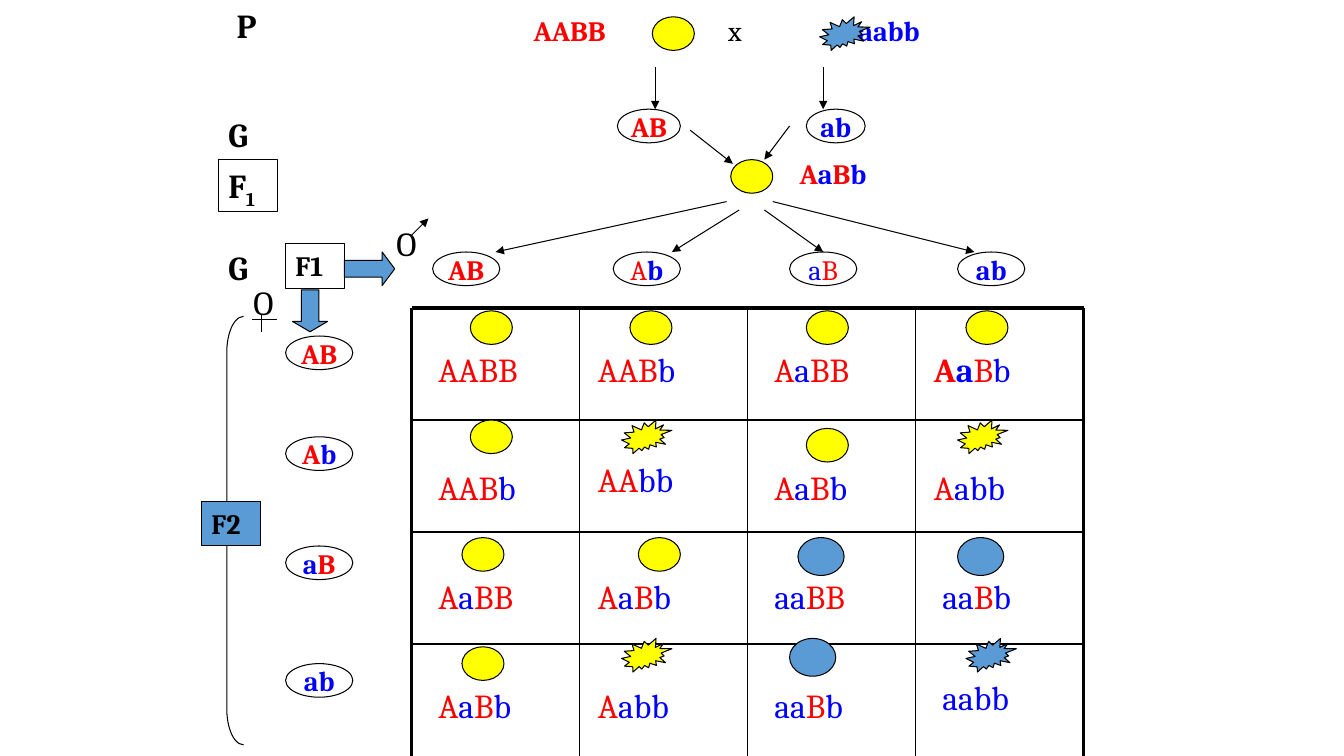
from itertools import groupby

from lxml.etree import SubElement
from pptx import Presentation
from pptx.dml.color import RGBColor
from pptx.enum.shapes import MSO_CONNECTOR, MSO_SHAPE as Preset
from pptx.enum.text import MSO_ANCHOR as Anchor, PP_ALIGN as Align
from pptx.oxml.ns import qn
from pptx.util import Pt

COLORS = {"black": "000000", "white": "FFFFFF", "dominant": "FF0000",
          "recessive": "0000FF", "yellow": "FFFF00", "blue": "5B9BD5"}
FONT = "Cambria"


def rgb(name):
    return RGBColor.from_string(COLORS[name])


def write(shape, text, size=24, bold="", color=None, subscript="",
          align=Align.LEFT, anchor=Anchor.TOP, wrap=True):
    """Write text; without a color each allele gets its own.
    bold and subscript list the letters they apply to."""
    def letter_format(letter):
        allele = "dominant" if letter.isupper() else "recessive"
        return color or allele, letter in bold, letter in subscript

    frame = shape.text_frame
    frame.word_wrap = wrap
    frame.vertical_anchor = anchor
    paragraph = frame.paragraphs[0]
    paragraph.alignment = align
    for (run_color, is_bold, is_sub), letters in groupby(text, letter_format):
        run = paragraph.add_run()
        run.text = "".join(letters)
        run.font.name = FONT
        run.font.size = Pt(size)
        run.font.bold = is_bold
        run.font.color.rgb = rgb(run_color)
        if is_sub:
            run.font._element.set("baseline", "-25000")


def add_label(slide, x, y, width, height, text, **text_format):
    write(slide.shapes.add_textbox(Pt(x), Pt(y), Pt(width), Pt(height)),
          text, **text_format)


def add_preset(slide, preset, x, y, width, height, fill=None, adjust=()):
    shape = slide.shapes.add_shape(preset, Pt(x), Pt(y), Pt(width), Pt(height))
    shape.shadow.inherit = False
    if fill:
        shape.fill.solid()
        shape.fill.fore_color.rgb = rgb(fill)
    else:
        shape.fill.background()
    shape.line.color.rgb = rgb("black")
    shape.line.width = Pt(0.75)
    for index, value in enumerate(adjust):
        shape.adjustments[index] = value
    return shape


def add_line(slide, x1, y1, x2, y2, weight=0.75, arrow=False):
    line = slide.shapes.add_connector(
        MSO_CONNECTOR.STRAIGHT, Pt(x1), Pt(y1), Pt(x2), Pt(y2))
    line.line.color.rgb = rgb("black")
    line.line.width = Pt(weight)
    if arrow:
        SubElement(line.line._get_or_add_ln(), qn("a:tailEnd"), type="triangle")
    SubElement(line._element.spPr, qn("a:effectLst"))


def add_gamete(slide, x, y, alleles, bold=None, width=48):
    oval = add_preset(slide, Preset.OVAL, x, y, width, 24, "white")
    write(oval, alleles, size=20, bold=alleles if bold is None else bold,
          align=Align.CENTER, anchor=Anchor.MIDDLE, wrap=False)


def add_seed(slide, x, y, genotype):
    """A gives yellow, aa blue; B gives round, bb wrinkled."""
    color = "yellow" if "A" in genotype else "blue"
    if "B" not in genotype:
        preset, width, height = Preset.EXPLOSION2, 36, 24
    elif color == "yellow":
        preset, width, height = Preset.OVAL, 30, 24
    else:
        preset, width, height = Preset.OVAL, 33, 27
    add_preset(slide, preset, x, y, width, height, color)


def generation_labels(slide, x, y):
    for dx, dy, width, name in ((6, 0, 37, "P"), (0, 78, 54, "G"), (0, 173, 54, "G")):
        add_label(slide, x + dx, y + dy, width, 36, name, bold=name, color="black")
    first_generation = add_preset(slide, Preset.RECTANGLE, x, y + 114, 42, 37)
    write(first_generation, "F1", bold="F1", color="black", subscript="1")


def parent_cross(slide, x, y):
    # Parents
    add_label(slide, x + 2, y + 6, 90, 31, "AABB", size=20, bold="AB")
    add_label(slide, x + 141, y + 6, 30, 31, "x", size=20, color="black")
    add_label(slide, x + 234, y + 6, 90, 31, "aabb", size=20, bold="ab")
    add_seed(slide, x + 94, y + 12, "AABB")
    add_seed(slide, x + 213.5, y + 12, "aabb")
    # Parental gametes
    add_gamete(slide, x + 69, y + 78, "AB", width=45)
    add_gamete(slide, x + 204, y + 78, "ab", width=42)
    for x1, y1, x2, y2 in ((96, 48, 96, 78), (216, 48, 216, 78),
                           (121, 93, 151.5, 117), (192, 90, 174, 114)):
        add_line(slide, x + x1, y + y1, x + x2, y + y2, arrow=True)
    # First generation
    add_seed(slide, x + 150, y + 114, "AaBb")
    add_label(slide, x + 192, y + 108, 96, 31, "AaBb", size=20, bold="AaBb")


def male_gametes(slide, x, y):
    for x1, y1, x2 in ((225, 0, 60), (234, 6, 186), (252, 6, 294), (258, 0, 402)):
        add_line(slide, x + x1, y + y1, x + x2, y + 36, arrow=True)
    for dx, alleles, bold in ((15, "AB", "AB"), (144, "Ab", "b"),
                              (270, "aB", ""), (390, "ab", "ab")):
        add_gamete(slide, x + dx, y + 36, alleles, bold)


def female_gametes(slide, x, y):
    # Second generation bracket
    add_preset(slide, Preset.LEFT_BRACKET, x + 18, y + 70, 12, 306, adjust=[2.125])
    second_generation = add_preset(slide, Preset.RECTANGLE, x, y + 202, 42, 32, "blue")
    write(second_generation, "F2", size=20, bold="F2", color="black")
    # First generation as both parents
    selfed = add_preset(slide, Preset.RECTANGLE, x + 60, y + 18, 42, 32)
    write(selfed, "F1", size=20, bold="F1", color="black")
    add_preset(slide, Preset.RIGHT_ARROW, x + 102, y + 24, 36, 24, "blue", [0.5, 0.375])
    add_preset(slide, Preset.DOWN_ARROW, x + 65, y + 51, 25, 30, "blue", [0.5, 0.294])
    # Male sign, then female sign
    add_label(slide, x + 132, y, 30, 36, "O", color="black")
    add_line(slide, x + 150, y + 12, x + 162, y, arrow=True)
    add_label(slide, x + 30, y + 42, 36, 36, "O", color="black")
    add_line(slide, x + 43, y + 69, x + 43, y + 81)
    add_line(slide, x + 36, y + 72, x + 54, y + 72)
    for dy, alleles in ((84, "AB"), (156, "Ab"), (234, "aB"), (318, "ab")):
        add_gamete(slide, x + 60, y + dy, alleles)


def punnett_square(slide, x, y, cell_width=120, cell_height=80):
    # Each cell: genotype, offset of its text, offset of its seed
    offspring = [
        [("AABB", 12, 26, 42, 2), ("AABb", 6, 26, 36, 2),
         ("AaBB", 12, 26, 42, 2), ("AaBb", 6, 26, 36, 2)],
        [("AABb", 12, 30, 42, 0), ("AAbb", 6, 24, 30, 0),
         ("AaBb", 12, 30, 42, 6), ("Aabb", 6, 30, 30, 0)],
        [("AaBB", 12, 28, 36, 4), ("AaBb", 6, 28, 42, 4),
         ("aaBB", 12, 28, 36, 4), ("aaBb", 12, 28, 30, 4)],
        [("AaBb", 12, 26, 36, 2), ("Aabb", 6, 26, 30, -4),
         ("aaBb", 12, 26, 30, -4), ("aabb", 12, 20, 36, -4)],
    ]
    size = len(offspring)
    right, bottom = x + size * cell_width, y + size * cell_height
    # Rules: heavy outside, open at the bottom
    for i in range(size):
        row_y = y + i * cell_height
        add_line(slide, x, row_y, right, row_y, 1 if i else 2.25)
    for i in range(size + 1):
        column_x = x + i * cell_width
        add_line(slide, column_x, y, column_x, bottom, 1 if 0 < i < size else 2.25)
    # Offspring
    for row, cells in enumerate(offspring):
        for column, (genotype, text_dx, text_dy, seed_dx, seed_dy) in enumerate(cells):
            cell_x, cell_y = x + column * cell_width, y + row * cell_height
            bold = "Aa" if (row, column) == (0, 3) else ""
            add_label(slide, cell_x + text_dx, cell_y + text_dy, 90, 36,
                      genotype, bold=bold)
            add_seed(slide, cell_x + seed_dx, cell_y + seed_dy, genotype)


def main():
    deck = Presentation()
    deck.slide_width, deck.slide_height = Pt(960), Pt(540)
    slide = deck.slides.add_slide(deck.slide_layouts[6])
    punnett_square(slide, 294, 220)
    generation_labels(slide, 156, 0)
    parent_cross(slide, 372, 0)
    male_gametes(slide, 294, 144)
    female_gametes(slide, 144, 156)
    deck.save("out.pptx")


if __name__ == "__main__":
    main()
